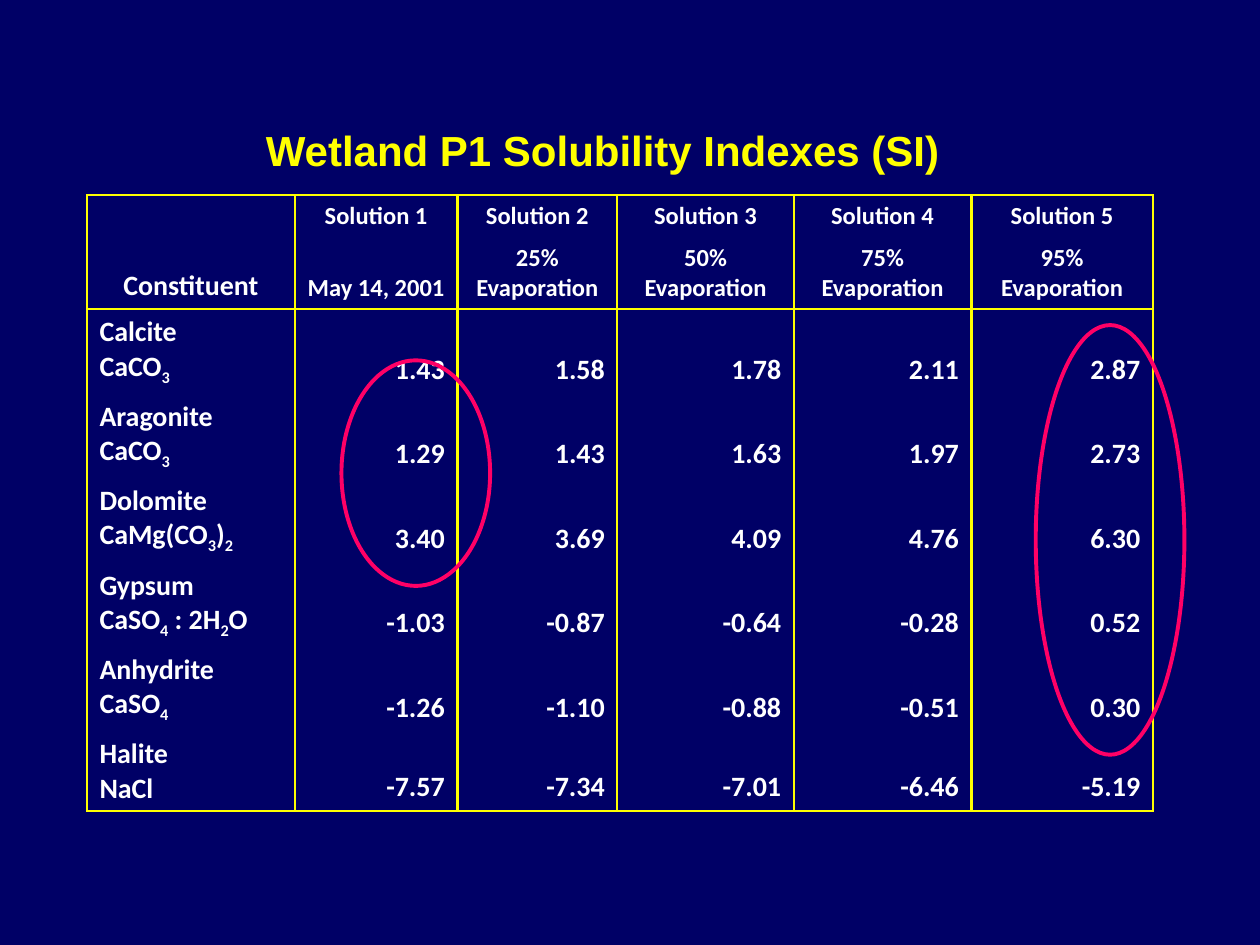
"""Build the slide of solubility indexes for wetland P1."""
from pptx import Presentation, util as u
from pptx.dml.color import RGBColor
from pptx.enum import shapes, text
from pptx.oxml import parse_xml
from pptx.oxml.ns import nsdecls

YELLOW, WHITE, PINK, NAVY = "FFFF00", "FFFFFF", "FF0066", "000066"


def colour(value):
    """Turn a hex string into a colour."""
    return RGBColor.from_string(value)


def add_span(para, words, size, tint=WHITE, face="Calibri", baseline=None):
    """Add a bold run to a paragraph."""
    span = para.add_run()
    span.text = words
    for name, value in {"name": face, "size": u.Pt(size), "bold": True}.items():
        setattr(span.font, name, value)
    span.font.color.rgb = colour(tint)
    if baseline:
        span.font._element.set("baseline", baseline)


deck = Presentation()
deck.slide_width, deck.slide_height = u.Inches(10), u.Inches(7.5)
page = deck.slides.add_slide(deck.slide_layouts[5])
page.background.fill.solid()
page.background.fill.fore_color.rgb = colour(NAVY)

title = page.shapes.title
place = {"left": 2.01, "top": 0.94, "width": 5.55, "height": 0.5}
for name, value in place.items():
    setattr(title, name, u.Inches(value))
frame_format = {
    "word_wrap": False,
    "auto_size": text.MSO_AUTO_SIZE.SHAPE_TO_FIT_TEXT,
    "vertical_anchor": text.MSO_ANCHOR.TOP,
}
for name, value in frame_format.items():
    setattr(title.text_frame, name, value)
para = title.text_frame.paragraphs[0]
para.alignment = text.PP_ALIGN.LEFT
add_span(para, "Wetland P1 Solubility Indexes (SI)", 24, YELLOW, "Arial")

headings = [
    ["Constituent"] + [f"Solution {number}" for number in range(1, 6)],
    ["", "May 14, 2001"] + [f"{share}% Evaporation" for share in (25, 50, 75, 95)],
]
minerals = [
    ["Calcite\nCaCO_3", "1.43", "1.58", "1.78", "2.11", "2.87"],
    ["Aragonite\nCaCO_3", "1.29", "1.43", "1.63", "1.97", "2.73"],
    ["Dolomite\nCaMg(CO_3)_2", "3.40", "3.69", "4.09", "4.76", "6.30"],
    ["Gypsum\nCaSO_4 : 2H_2O", "-1.03", "-0.87", "-0.64", "-0.28", "0.52"],
    ["Anhydrite\nCaSO_4", "-1.26", "-1.10", "-0.88", "-0.51", "0.30"],
    ["Halite\nNaCl", "-7.57", "-7.34", "-7.01", "-6.46", "-5.19"],
]
rows = headings + minerals
widths = [1.65, 1.29, 1.27, 1.4, 1.41, 1.44]
last = len(rows) - 1

table = page.shapes.add_table(
    len(rows), len(widths), u.Inches(0.69), u.Inches(1.55), u.Inches(8.46), u.Inches(4.7)
).table
table.first_row = table.horz_banding = False
for column, width in zip(table.columns, widths):
    column.width = u.Inches(width)
for row in table.rows:
    row.height = u.Inches(0.28)
table.cell(0, 0).merge(table.cell(1, 0))

for r, row in enumerate(rows):
    for c, words in enumerate(row):
        cell = table.cell(r, c)
        cell.vertical_anchor = text.MSO_ANCHOR.BOTTOM
        if r < 2:
            align = text.PP_ALIGN.CENTER
        else:
            align = text.PP_ALIGN.RIGHT if c else text.PP_ALIGN.LEFT
        size = 14 if r < 2 and c else 16
        for index, line in enumerate(words.split("\n") if words else []):
            frame = cell.text_frame
            para = frame.add_paragraph() if index else frame.paragraphs[0]
            para.alignment = align
            start, *pieces = line.split("_")
            add_span(para, start, size)
            for piece in pieces:
                add_span(para, piece[0], size, baseline="-25000")
                if piece[1:]:
                    add_span(para, piece[1:], size)
        top = {0: 1.5, 2: 1}.get(r, 0)
        bottom = 1 if r == 1 or (r, c) == (0, 0) else 1.5 if r == last else 0
        for side, weight in {"L": 1.5, "R": 1.5, "T": top, "B": bottom}.items():
            paint = f'<a:solidFill><a:srgbClr val="{YELLOW}"/></a:solidFill>' if weight else "<a:noFill/>"
            cell._tc.get_or_add_tcPr().append(parse_xml(
                f'<a:ln{side} {nsdecls("a")} w="{int(u.Pt(weight))}">{paint}</a:ln{side}>'
            ))
        cell.fill.background()

for box in [(2.71, 2.86, 1.18, 1.79), (8.22, 2.58, 1.18, 3.41)]:
    ring = page.shapes.add_shape(shapes.MSO_SHAPE.OVAL, *map(u.Inches, box))
    ring.shadow.inherit = False
    ring.fill.background()
    ring.line.color.rgb = colour(PINK)
    ring.line.width = u.Pt(2.25)

deck.save("out.pptx")
